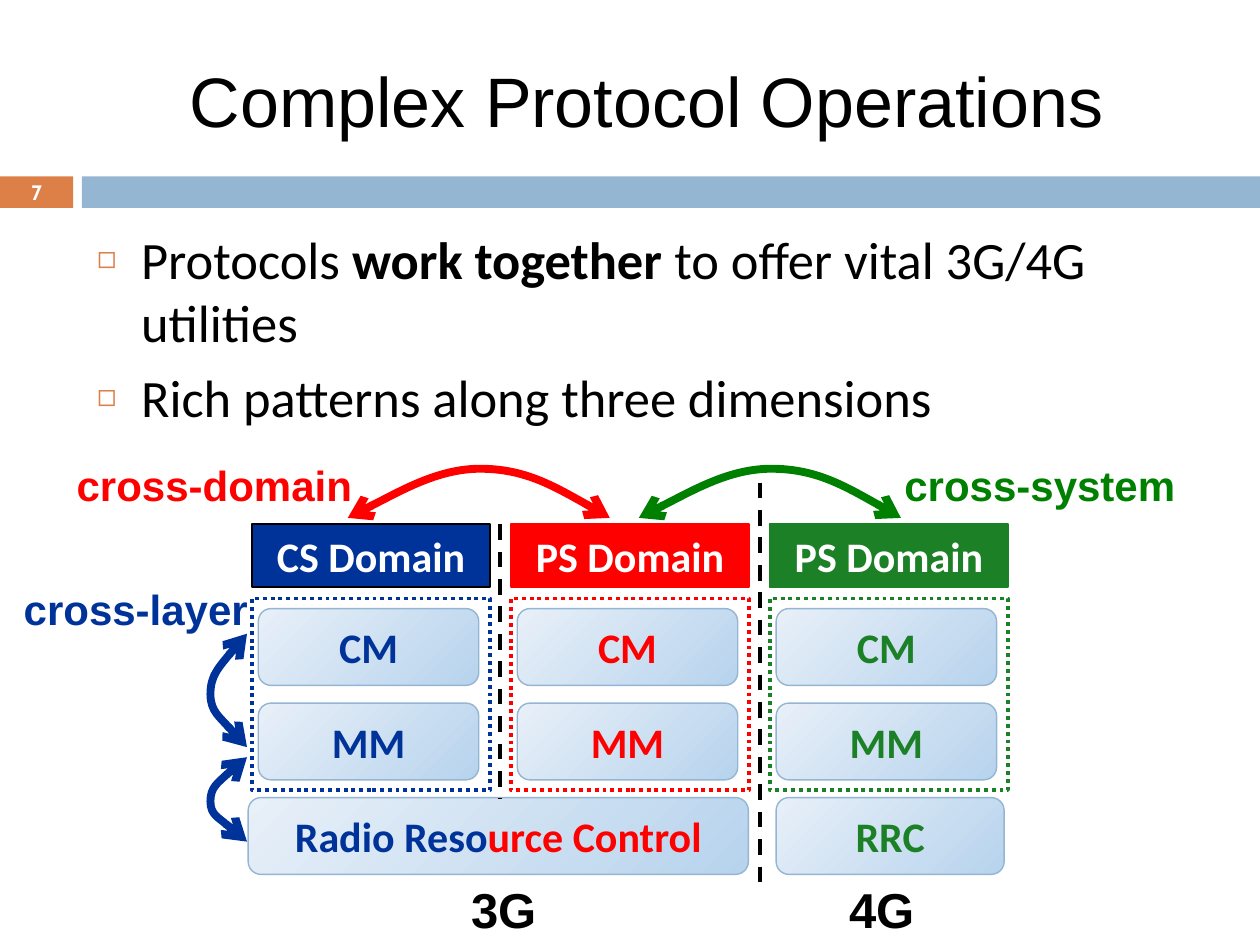
from lxml.etree import SubElement
from pptx import Presentation
from pptx.dml.color import RGBColor
from pptx.enum.dml import MSO_LINE_DASH_STYLE as Dash
from pptx.enum.shapes import MSO_CONNECTOR, MSO_SHAPE as Preset
from pptx.enum.text import MSO_ANCHOR as Anchor, MSO_AUTO_SIZE as AutoSize, PP_ALIGN as Align
from pptx.oxml.ns import qn
from pptx.util import Inches, Pt

COLORS = {
    "black": "000000", "white": "FFFFFF", "orange": "DD8047", "band": "94B6D2",
    "blue": "003399", "red": "FF0000", "green": "1B8026", "arc_green": "008000",
    "box_dark": "B7D3ED", "box_light": "E8F0F8",
}
TITLE = "Complex Protocol Operations"
BULLETS = [
    [("Protocols ", False), ("work together ", True), ("to offer vital 3G/4G utilities", False)],
    [("Rich patterns along three dimensions", False)],
]
DOMAINS = [("CS Domain", "blue", "black"), ("PS Domain", "red", "red"), ("PS Domain", "green", "green")]
LAYERS = ["CM", "MM"]
RADIO_BOXES = [
    ([("Radio Reso", "blue"), ("urce Control", "red")], 1.97, 3.97),
    ([("RRC", "green")], 6.16, 1.81),
]
SEPARATORS = [(3.97, 4.16, 6.34), (6.03, 3.83, 7.08)]
LABELS = [
    ("3G", 3.64, 6.93, 0.73, 0.57, 28, "black"),
    ("4G", 6.64, 6.93, 0.73, 0.57, 28, "black"),
    ("cross-layer", 0.09, 4.58, 2, 0.5, 24, "blue"),
    ("cross-domain", 0.51, 3.6, 2.41, 0.5, 24, "red"),
    ("cross-system", 7.08, 3.6, 2.37, 0.5, 24, "arc_green"),
]
LAYER_ARCS = [(5.03, 5.2, 5.36, 5.51, 5.65, 5.93), (6.01, 6.13, 6.25, 6.36, 6.47, 6.68)]
DOMAIN_ARCS = [(2.76, "red"), (5.07, "arc_green")]

COLUMN_LEFT, COLUMN_PITCH, COLUMN_WIDTH = 2, 2.055, 1.89
HEADER_TOP, HEADER_HEIGHT = 4.16, 0.5
FRAME_TOP, FRAME_HEIGHT = 4.75, 1.52
LAYER_TOP, LAYER_PITCH = 4.83, 0.75
LAYER_INSET, LAYER_WIDTH, BOX_HEIGHT = 0.05, 1.75, 0.61
RADIO_TOP = LAYER_TOP + len(LAYERS) * LAYER_PITCH


def rgb(color):
    return RGBColor.from_string(COLORS[color])


def set_font(font, size, color, name="Calibri", bold=True):
    font.size, font.name, font.bold = Pt(size), name, bold
    font.color.rgb = rgb(color)


def place(shape, *box):
    shape.left, shape.top, shape.width, shape.height = map(Inches, box)


def set_line(shape, color, width, dash=None):
    shape.line.color.rgb = rgb(color)
    shape.line.width = Pt(width)
    if dash:
        shape.line.dash_style = dash


def add_box(slide, preset, box, fill=None):
    shape = slide.shapes.add_shape(preset, *map(Inches, box))
    shape.shadow.inherit = False
    if fill:
        shape.fill.solid()
        shape.fill.fore_color.rgb = rgb(fill)
    else:
        shape.fill.background()
    shape.line.fill.background()
    return shape


def write_centered(shape, runs):
    frame = shape.text_frame
    frame.vertical_anchor = Anchor.MIDDLE
    paragraph = frame.paragraphs[0]
    paragraph.alignment = Align.CENTER
    for text, color in runs:
        run = paragraph.add_run()
        run.text = text
        set_font(run.font, 24, color)


def add_protocol(slide, runs, *box):
    protocol = add_box(slide, Preset.ROUNDED_RECTANGLE, box)
    protocol.fill.gradient()
    protocol.fill.gradient_angle = 135
    for stop, color in zip(protocol.fill.gradient_stops, ("box_dark", "box_light")):
        stop.color.rgb = rgb(color)
    set_line(protocol, "band", 0.79)
    write_centered(protocol, runs)


def add_label(slide, text, x, y, width, height, size, color, font="Arial"):
    label = slide.shapes.add_textbox(*map(Inches, (x, y, width, height)))
    label.text_frame.word_wrap = False
    paragraph = label.text_frame.paragraphs[0]
    paragraph.text = text
    set_font(paragraph.font, size, color, font)
    return label


def add_arc(slide, points, color):
    start, *rest = [(Inches(x), Inches(y)) for x, y in points]
    builder = slide.shapes.build_freeform(*start)
    builder.add_line_segments(rest, close=False)
    arc = builder.convert_to_shape()
    arc.shadow.inherit = False
    arc.fill.background()
    set_line(arc, color, 4.5)
    segments = list(arc._element.iter(qn("a:lnTo")))
    outline = segments[0].getparent()
    for first in range(0, len(segments), 3):
        curve = SubElement(outline, qn("a:cubicBezTo"))
        for segment in segments[first:first + 3]:
            curve.append(segment[0])
            outline.remove(segment)
    for end in ("a:headEnd", "a:tailEnd"):
        SubElement(arc.line._get_or_add_ln(), qn(end), type="arrow")


def add_bullets(body):
    place(body, 0.67, 1.75, 8.92, 4.92)
    frame = body.text_frame
    frame.auto_size = AutoSize.NONE
    for index, runs in enumerate(BULLETS):
        paragraph = frame.add_paragraph() if index else frame.paragraphs[0]
        paragraph.space_before = Pt(7)
        props = paragraph._p.get_or_add_pPr()
        props.set("marL", str(Inches(0.35)))
        props.set("indent", str(-Inches(0.35)))
        SubElement(SubElement(props, qn("a:buClr")), qn("a:srgbClr"), val=COLORS["orange"])
        SubElement(props, qn("a:buSzPct"), val="60000")
        SubElement(props, qn("a:buChar"), char="◻")
        for text, bold in runs:
            run = paragraph.add_run()
            run.text = text
            set_font(run.font, 30, "black", bold=bold)


def add_stack(slide, column, header, color, border):
    left = COLUMN_LEFT + column * COLUMN_PITCH
    frame = add_box(slide, Preset.RECTANGLE, (left, FRAME_TOP, COLUMN_WIDTH, FRAME_HEIGHT))
    set_line(frame, color, 2.25, Dash.ROUND_DOT)
    heading = add_box(slide, Preset.RECTANGLE, (left, HEADER_TOP, COLUMN_WIDTH, HEADER_HEIGHT), color)
    set_line(heading, border, 0.75)
    write_centered(heading, [(header, "white")])
    for row, layer in enumerate(LAYERS):
        add_protocol(slide, [(layer, color)], left + LAYER_INSET, LAYER_TOP + row * LAYER_PITCH,
                     LAYER_WIDTH, BOX_HEIGHT)


def main():
    deck = Presentation()
    deck.slide_width, deck.slide_height = Inches(10), Inches(7.5)
    slide = deck.slides.add_slide(deck.slide_layouts[1])

    add_box(slide, Preset.RECTANGLE, (0, 1.4, 0.58, 0.25), "orange")
    add_box(slide, Preset.RECTANGLE, (0.65, 1.4, 9.35, 0.25), "band")
    title = slide.shapes.title
    place(title, 0.67, 0.25, 8.92, 1.08)
    title.text_frame.text = TITLE
    title.text_frame.vertical_anchor = Anchor.MIDDLE
    heading = title.text_frame.paragraphs[0]
    heading.alignment = Align.CENTER
    set_font(heading.font, 40, "black", "Arial", bold=False)
    add_bullets(slide.placeholders[1])

    number = add_label(slide, "7", 0, 1.39, 0.58, 0.27, 11.9, "white", "Cabin")
    number.text_frame.word_wrap = True
    number.text_frame.vertical_anchor = Anchor.MIDDLE
    number.text_frame.paragraphs[0].alignment = Align.CENTER

    for runs, left, width in RADIO_BOXES:
        add_protocol(slide, runs, left, RADIO_TOP, width, BOX_HEIGHT)
    for column, domain in enumerate(DOMAINS):
        add_stack(slide, column, *domain)
    for x, top, bottom in SEPARATORS:
        separator = slide.shapes.add_connector(MSO_CONNECTOR.STRAIGHT, *map(Inches, (x, top, x, bottom)))
        set_line(separator, "black", 2.25, Dash.DASH)
        SubElement(separator._element.spPr, qn("a:effectLst"))

    for heights in LAYER_ARCS:
        add_arc(slide, zip((1.96, 1.81, 1.67, 1.67, 1.67, 1.96, 1.96), heights + heights[-1:]), "blue")
    for left, color in DOMAIN_ARCS:
        offsets = (2.08, 1.74, 1.4, 1.05, 0.71, 0, 0)
        heights = (4.11, 3.91, 3.72, 3.72, 3.72, 4.11, 4.11)
        add_arc(slide, zip([left + offset for offset in offsets], heights), color)
    for label in LABELS:
        add_label(slide, *label)
    deck.save("out.pptx")


if __name__ == "__main__":
    main()
